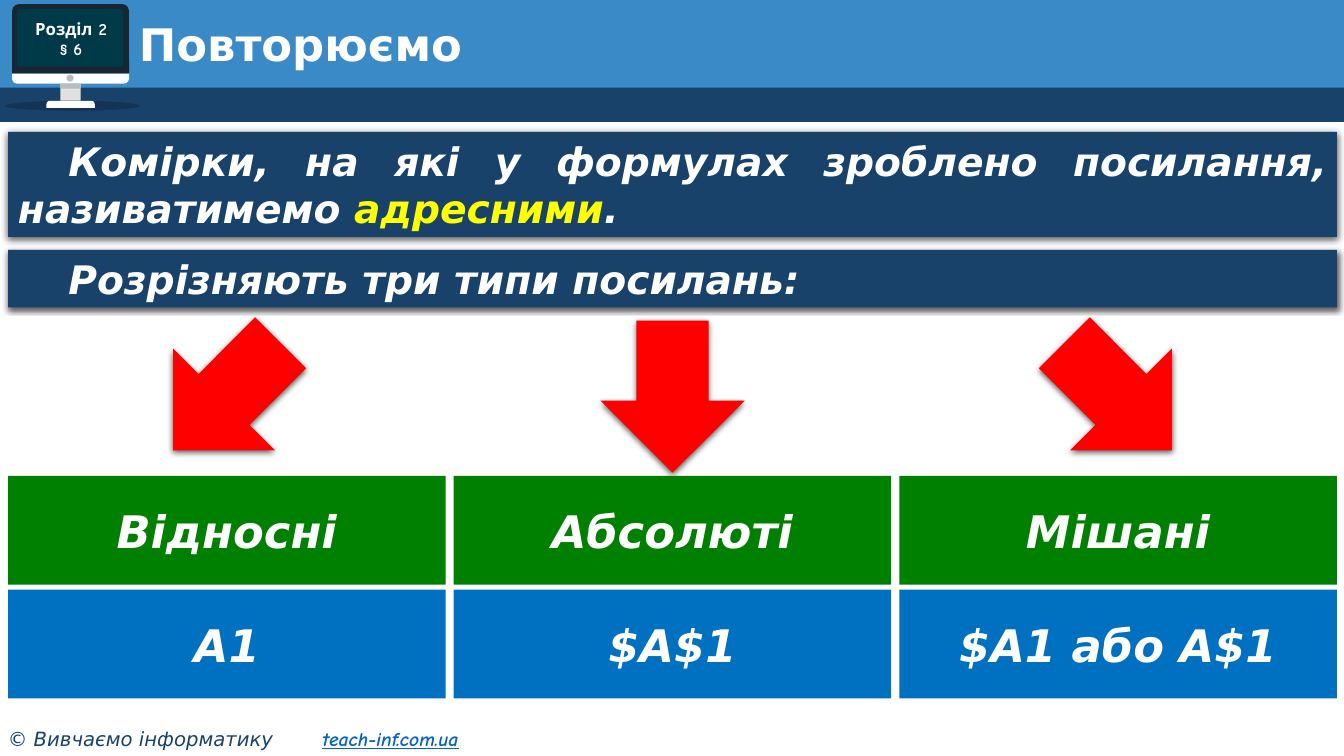
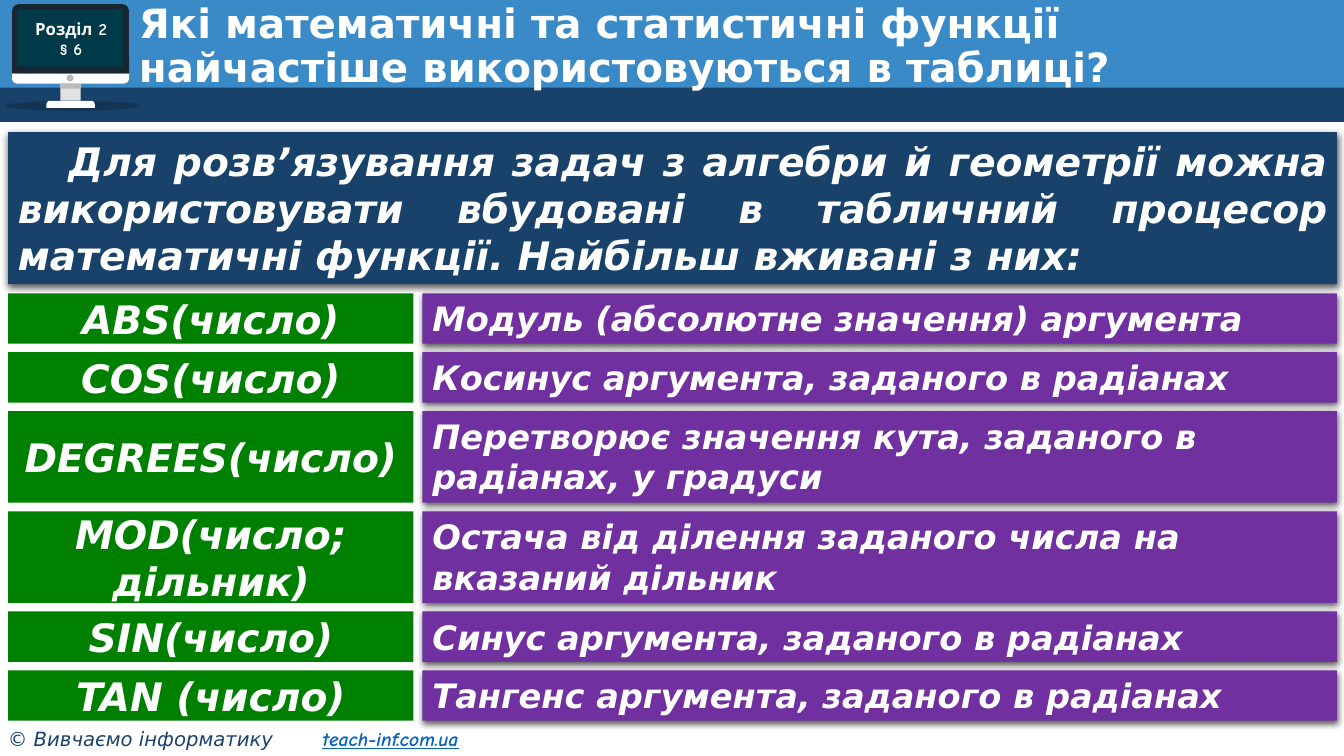
import pptx
import pptx.util
import pptx.dml.color
import pptx.enum.shapes
import pptx.enum.text
import pptx.oxml
import pptx.oxml.ns

Inches = pptx.util.Inches
Pt = pptx.util.Pt
RGBColor = pptx.dml.color.RGBColor
SHAPE = pptx.enum.shapes.MSO_SHAPE
ALIGN = pptx.enum.text.PP_ALIGN
ANCHOR = pptx.enum.text.MSO_ANCHOR
FIT = pptx.enum.text.MSO_AUTO_SIZE

NAVY = RGBColor(0x19, 0x42, 0x6B)
SKY = RGBColor(0x39, 0x8A, 0xC7)
BLUE = RGBColor(0x00, 0x70, 0xC0)
GREEN = RGBColor(0x00, 0x80, 0x00)
PURPLE = RGBColor(0x70, 0x30, 0xA0)
RED = RGBColor(0xFF, 0x00, 0x00)
YELLOW = RGBColor(0xFF, 0xFF, 0x00)
WHITE = RGBColor(0xFF, 0xFF, 0xFF)
BLACK = RGBColor(0x00, 0x00, 0x00)
LINK = RGBColor(0x05, 0x63, 0xC1)
BEZEL = RGBColor(0x18, 0x26, 0x32)
SCREEN = RGBColor(0x00, 0x39, 0x48)
LIGHT_GREY = RGBColor(0xE1, 0xE1, 0xE1)
GREY = RGBColor(0xBB, 0xBB, 0xBB)

MAIN_FONT = "DejaVu Sans"
HAND_FONT = "Comic Neue"
SLIDE_WIDTH = 13.33
MARGIN = 0.08
BODY_WIDTH = 13.18
GAP = 0.08
NS = pptx.oxml.ns.nsdecls("a")
SHADOW = (
    f'<a:effectLst {NS}><a:outerShdw blurRad="57150" dist="19050" dir="5400000" '
    'algn="ctr" rotWithShape="0"><a:srgbClr val="000000"><a:alpha val="63000"/>'
    '</a:srgbClr></a:outerShdw></a:effectLst>'
)


def add_figure(slide, kind, box, color, adjustments=(), shadow=False):
    """Add a borderless filled preset shape; box is left, top, width, height in inches."""
    figure = slide.shapes.add_shape(kind, *map(Inches, box))
    figure.fill.solid()
    figure.fill.fore_color.rgb = color
    figure.line.fill.background()
    for index, value in enumerate(adjustments):
        figure.adjustments[index] = value
    if shadow:
        figure._element.spPr.append(pptx.oxml.parse_xml(SHADOW))
    else:
        figure.shadow.inherit = False
    return figure


def add_text_box(slide, box, anchor=ANCHOR.MIDDLE):
    text_box = slide.shapes.add_textbox(*map(Inches, box))
    text_box.text_frame.word_wrap = True
    text_box.text_frame.vertical_anchor = anchor
    return text_box.text_frame


def add_span(para, text, size, color=WHITE, font=MAIN_FONT, bold=True, italic=False):
    span = para.add_run()
    span.text = text
    span.font.size = Pt(size)
    span.font.name = font
    span.font.bold = bold
    span.font.italic = italic
    span.font.color.rgb = color
    return span


def add_panel(slide, box, color, spans, size, align=ALIGN.CENTER, indent=0, raised=False):
    """Add a coloured bar; spans are (text, colour) pairs, raised bars have a shadow."""
    panel = add_figure(slide, SHAPE.RECTANGLE, box, color, shadow=raised)
    frame = panel.text_frame
    frame.word_wrap = True
    frame.vertical_anchor = ANCHOR.TOP if raised else ANCHOR.MIDDLE
    if raised:
        frame.auto_size = FIT.SHAPE_TO_FIT_TEXT
    para = frame.paragraphs[0]
    para.alignment = align
    if indent:
        properties = para._p.get_or_add_pPr()
        properties.set("marL", "0")
        properties.set("indent", str(Inches(indent)))
    for text, text_color in spans:
        add_span(para, text, size, text_color, italic=True)


def add_statement(slide, top, height, spans):
    add_panel(slide, (MARGIN, top, BODY_WIDTH, height), NAVY, spans, 28,
              ALIGN.JUSTIFY, indent=0.5, raised=True)


def add_monitor(slide, left, top):
    round_top = SHAPE.ROUND_2_SAME_RECTANGLE
    parts = [
        (SHAPE.OVAL, (0, 0.96, 1.34, 0.1), BLACK, ()),
        (round_top, (0.07, 0, 1.16, 0.69), BEZEL, (0.1, 0)),
        (round_top, (0.07, 0.69, 1.16, 0.1), WHITE, (0, 0.5)),
        (SHAPE.RECTANGLE, (0.55, 0.79, 0.2, 0.17), LIGHT_GREY, ()),
        (SHAPE.RECTANGLE, (0.55, 0.79, 0.2, 0.05), GREY, ()),
        (round_top, (0.41, 0.96, 0.48, 0.07), WHITE, (0.5, 0)),
        (SHAPE.OVAL, (0.61, 0.7, 0.07, 0.07), GREY, ()),
        (SHAPE.ROUNDED_RECTANGLE, (0.12, 0.05, 1.05, 0.57), SCREEN, (0.04,)),
    ]
    for kind, (x, y, width, height), color, adjustments in parts:
        figure = add_figure(slide, kind, (left + x, top + y, width, height),
                            color, adjustments)
        if color == BLACK:
            fill_color = figure._element.spPr.find(
                ".//" + pptx.oxml.ns.qn("a:srgbClr"))
            fill_color.append(pptx.oxml.parse_xml(f'<a:alpha {NS} val="20000"/>'))

    frame = add_text_box(slide, (left + 0.08, top + 0.05, 1.15, 0.59))
    for index, text in enumerate(("Розділ 2", "§ 6")):
        para = frame.add_paragraph() if index else frame.paragraphs[0]
        para.alignment = ALIGN.CENTER
        add_span(para, text, 12, font=HAND_FONT)


def add_footer(slide, left, top):
    frame = add_text_box(slide, (left, top, 5.23, 0.34), ANCHOR.TOP)
    para = frame.paragraphs[0]
    para._p.get_or_add_pPr().append(pptx.oxml.parse_xml(
        f'<a:tabLst {NS}><a:tab pos="{Inches(3.12)}" algn="l"/></a:tabLst>'))
    add_span(para, "© Вивчаємо інформатику\t", 14, NAVY, bold=False, italic=True)
    address = add_span(para, "teach-inf.com.ua", 14, LINK, HAND_FONT, italic=True)
    address.font.underline = True


def add_base_slide(deck, title, title_size):
    """Add a blank slide with the bands, monitor, footer and title."""
    slide = deck.slides.add_slide(deck.slide_layouts[6])
    add_figure(slide, SHAPE.RECTANGLE, (0, 0, SLIDE_WIDTH, 0.91), SKY)
    add_figure(slide, SHAPE.RECTANGLE, (0, 0.87, SLIDE_WIDTH, 0.34), NAVY)
    add_monitor(slide, 0.05, 0.04)
    add_footer(slide, -0.02, 7.16)
    para = add_text_box(slide, (1.28, 0.18, 9.9, 0.58)).paragraphs[0]
    para.line_spacing = 0.9
    add_span(para, title, title_size)
    return slide


def add_reference_types(slide, left, top, width):
    """Add three columns, each an arrow above a type name and its example."""
    columns = [
        ("Відносні", "A1", 135),
        ("Абсолюті", "$A$1", 90),
        ("Мішані", "$A1 або A$1", 45),
    ]
    column_width = (width - GAP * (len(columns) - 1)) / len(columns)
    arrow_width, arrow_height, cell_height = 1.51, 1.43, 1.08
    for index, (name, example, angle) in enumerate(columns):
        x = left + index * (column_width + GAP)
        arrow_left = x + (column_width - arrow_width) / 2
        arrow = add_figure(slide, SHAPE.RIGHT_ARROW,
                           (arrow_left, top, arrow_width, arrow_height), RED, shadow=True)
        arrow.rotation = angle
        for y, color, text in ((1.5, GREEN, name), (2.63, BLUE, example)):
            add_panel(slide, (x, top + y, column_width, cell_height), color,
                      [(text, WHITE)], 32)


def add_function_rows(slide, left, top, width, height):
    """Add rows of a function and its meaning, evenly spaced down the box."""
    low, tall = 0.5, 0.91
    rows = [
        ("ABS(число)", "Модуль (абсолютне значення) аргумента", low),
        ("COS(число)", "Косинус аргумента, заданого в радіанах", low),
        ("DEGREES(число)", "Перетворює значення кута, заданого в радіанах, у градуси", tall),
        ("МОD(число; дільник)", "Остача від ділення заданого числа на вказаний дільник", tall),
        ("SIN(число)", "Синус аргумента, заданого в радіанах", low),
        ("TAN (число)", "Тангенс аргумента, заданого в радіанах", low),
    ]
    row_gap = (height - sum(row[2] for row in rows)) / (len(rows) - 1)
    name_width, meaning_offset = 4.02, 4.11
    for name, meaning, row_height in rows:
        add_panel(slide, (left + meaning_offset, top, width - meaning_offset, row_height),
                  PURPLE, [(meaning, WHITE)], 24, ALIGN.LEFT, raised=True)
        add_panel(slide, (left, top, name_width, row_height), GREEN, [(name, WHITE)], 28)
        top += row_height + row_gap


def add_review_slide(deck):
    slide = add_base_slide(deck, "Повторюємо", 32)
    add_statement(slide, 1.31, 1.04, [
        ("Комірки, на які у формулах зроблено посилання, називатимемо ", WHITE),
        ("адресними", YELLOW),
        (".", WHITE),
    ])
    add_statement(slide, 2.48, 0.57, [("Розрізняють три типи посилань:", WHITE)])
    add_reference_types(slide, MARGIN, 3.22, BODY_WIDTH)


def add_functions_slide(deck):
    slide = add_base_slide(
        deck,
        "Які математичні та статистичні функції найчастіше використовуються в таблиці?",
        28.8)
    add_statement(slide, 1.31, 1.51, [
        ("Для розв’язування задач з алгебри й геометрії можна використовувати "
         "вбудовані в табличний процесор математичні функції. "
         "Найбільш вживані з них:", WHITE),
    ])
    add_function_rows(slide, MARGIN, 2.91, BODY_WIDTH, 4.24)


def main():
    deck = pptx.Presentation()
    deck.slide_width = Inches(SLIDE_WIDTH)
    deck.slide_height = Inches(7.5)
    add_review_slide(deck)
    add_functions_slide(deck)
    deck.save("out.pptx")


if __name__ == "__main__":
    main()
